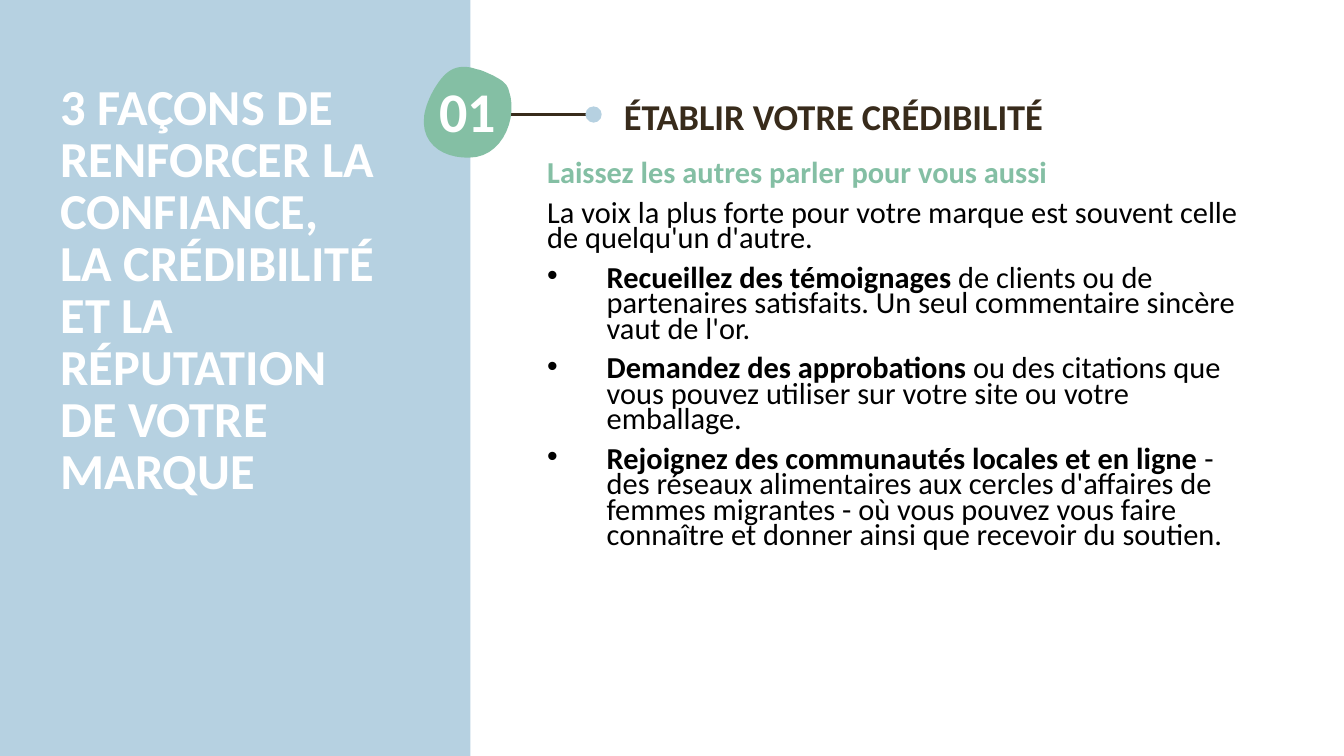
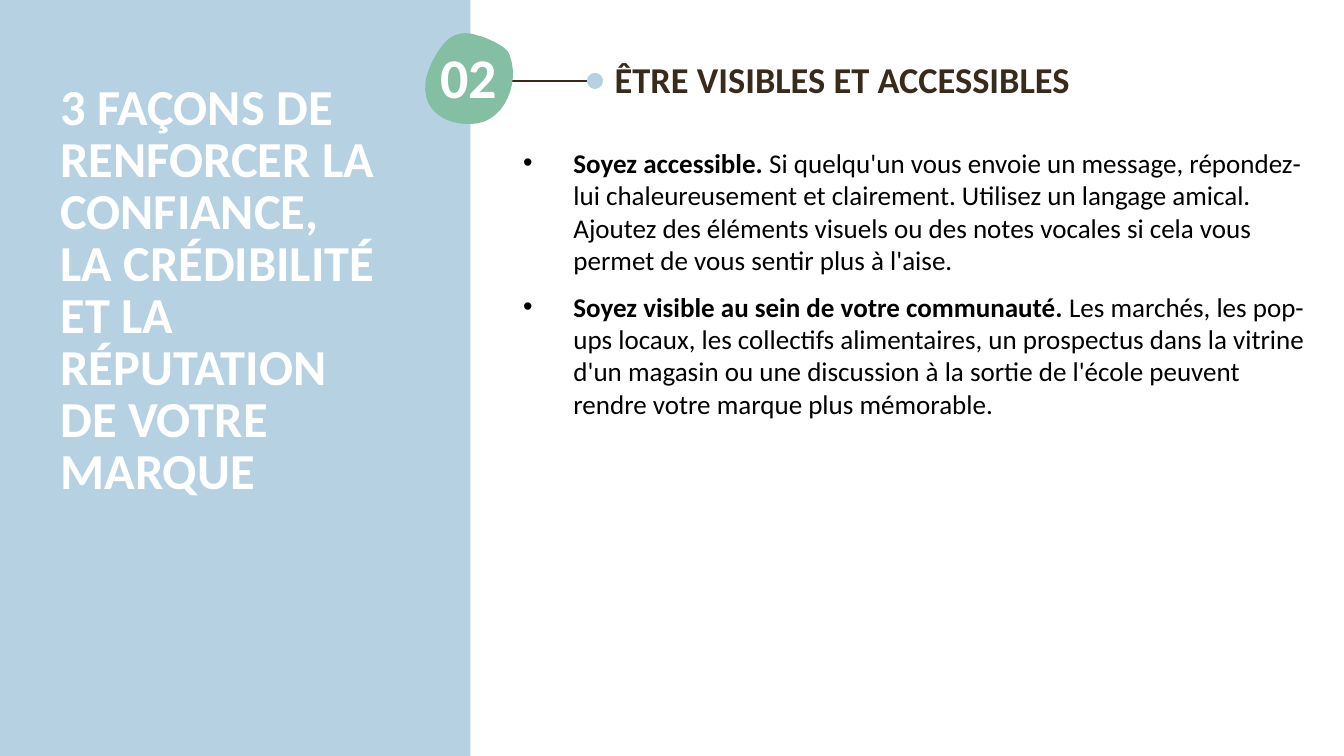
from lxml.etree import SubElement
from pptx import Presentation
from pptx.dml.color import RGBColor
from pptx.enum.shapes import MSO_CONNECTOR, MSO_SHAPE
from pptx.enum.text import MSO_ANCHOR, MSO_AUTO_SIZE, PP_ALIGN
from pptx.oxml.ns import qn
from pptx.util import Pt

TITLE = ("3 FAÇONS DE RENFORCER LA CONFIANCE,\vLA CRÉDIBILITÉ ET LA RÉPUTATION "
         "DE VOTRE MARQUE")
BADGE_START = (37.4, 1.4)
BADGE_CURVES = [
    ((29.5, -1.4), (20.9, -1.4), (13.7, 6.5)),
    ((7.2, 13.7), (1.4, 25.2), (0, 34.6)),
    ((-2.9, 56.9), (17.3, 67), (37.4, 64.1)),
    ((56.9, 60.5), (67, 35.3), (60.5, 16.6)),
    ((59, 10.8), (54, 8.6), (49, 5.8)),
    ((45.4, 4.3), (41.8, 2.2), BADGE_START),
]


def color(value):
    """Turn a hex string into a colour."""
    return RGBColor.from_string(value)


def curve_points(start, curves, steps=12):
    """Return points along a chain of cubic curves."""
    points = []
    for first, second, end in curves:
        for step in range(1, steps + 1):
            t = step / steps
            u = 1 - t
            points.append(tuple(
                u**3 * a + 3 * u * u * t * b + 3 * u * t * t * c + t**3 * d
                for a, b, c, d in zip(start, first, second, end)))
        start = end
    return points


class Deck:
    """Hold the style and the current slide."""

    FONT = "Calibri"
    BLUE, GREEN, BROWN = "B6D1E1", "84BFA4", "382B1B"
    WHITE, BLACK = "FFFFFF", "000000"
    WIDTH, HEIGHT = 960, 540

    def __init__(self):
        """Start a wide presentation."""
        self.presentation = Presentation()
        self.presentation.slide_width = Pt(self.WIDTH)
        self.presentation.slide_height = Pt(self.HEIGHT)
        self.slide = None

    def add_slide(self):
        """Add a slide with the side band and its title."""
        self.slide = self.presentation.slides.add_slide(
            self.presentation.slide_layouts[5])
        band = self.shape(MSO_SHAPE.RECTANGLE, 0, 0, 336, self.HEIGHT)
        title = self.slide.shapes.title
        title.element.addprevious(band.element)
        title.left, title.top, title.width, title.height = map(Pt, (36, 56, 240.5, 157))
        frame = title.text_frame
        frame.text = TITLE
        frame.vertical_anchor = MSO_ANCHOR.TOP
        frame.auto_size = MSO_AUTO_SIZE.NONE
        paragraph = frame.paragraphs[0]
        paragraph.alignment = PP_ALIGN.LEFT
        paragraph.line_spacing = Pt(37.2)
        self.style(paragraph, 36, self.WHITE, True)

    def style(self, paragraph, size, text_color, bold=None):
        """Set the font of a paragraph."""
        font = paragraph.font
        font.name, font.size, font.bold = self.FONT, Pt(size), bold
        font.color.rgb = color(text_color)

    def paint(self, shape, fill):
        """Give a shape a plain fill without line or shadow."""
        shape.shadow.inherit = False
        shape.fill.solid()
        shape.fill.fore_color.rgb = color(fill)
        shape.line.fill.background()
        return shape

    def shape(self, kind, left, top, width, height):
        """Add a blue preset shape."""
        shape = self.slide.shapes.add_shape(kind, *map(Pt, (left, top, width, height)))
        return self.paint(shape, self.BLUE)

    def text_frame(self, left, top, width, height):
        """Add a wrapping text box and return its frame."""
        box = self.slide.shapes.add_textbox(*map(Pt, (left, top, width, height)))
        box.text_frame.word_wrap = True
        return box.text_frame

    def label(self, text, area, size, text_color, centered=False, spacing=None):
        """Add a bold one-line text."""
        paragraph = self.text_frame(*area).paragraphs[0]
        paragraph.text = text
        paragraph.alignment = PP_ALIGN.CENTER if centered else PP_ALIGN.LEFT
        paragraph.line_spacing = spacing
        self.style(paragraph, size, text_color, True)

    def marker(self, number, left, top):
        """Add a numbered badge with its line and dot."""
        axis = top + 33.8
        line = self.slide.shapes.add_connector(
            MSO_CONNECTOR.STRAIGHT, Pt(left + 118.8), Pt(axis), Pt(left + 23), Pt(axis))
        line.line.color.rgb = color(self.BROWN)
        line.line.width = Pt(1.5)
        SubElement(line.element.spPr, qn("a:effectLst"))
        self.shape(MSO_SHAPE.OVAL, left + 115.2, axis - 5.8, 11.6, 11.6)
        start, *points = [(Pt(left + x), Pt(top + y)) for x, y in
                          [BADGE_START] + curve_points(BADGE_START, BADGE_CURVES)]
        builder = self.slide.shapes.build_freeform(*start)
        builder.add_line_segments(points)
        self.paint(builder.convert_to_shape(), self.GREEN)
        self.label(number, (left - 4.3, top + 8.6, 70.6, 42.5), 40, self.WHITE, True, 0.9)

    def heading(self, text, left, top, height):
        """Add the heading beside a marker."""
        self.label(text, (left, top, 480, height), 26, self.BROWN)

    def body(self, area, size, bullets, indent, spacing=None, lead="", intro=""):
        """Add optional opening lines and bullets with bold starts."""
        frame = self.text_frame(*area)
        rows = [(lead, "", self.GREEN, False), (intro, "", self.BLACK, False)] if lead else []
        rows += [(start, rest, self.BLACK, True) for start, rest in bullets]
        for index, (start, rest, text_color, bulleted) in enumerate(rows):
            paragraph = frame.add_paragraph() if index else frame.paragraphs[0]
            paragraph.line_spacing = spacing
            if index:
                paragraph.space_before = Pt(10)
            if bulleted:
                self.bullet(paragraph, indent)
                paragraph.add_run().text = start
                paragraph.add_run().text = rest
                paragraph.runs[0].font.bold = True
            else:
                paragraph.text = start
            self.style(paragraph, size, text_color, start == lead or None)

    def bullet(self, paragraph, indent):
        """Add a hanging bullet to a paragraph."""
        properties = paragraph._p.get_or_add_pPr()
        properties.set("marL", str(Pt(indent)))
        properties.set("indent", str(-Pt(indent)))
        SubElement(properties, qn("a:buFont"), typeface="Arial")
        SubElement(properties, qn("a:buChar"), char="•")


def main():
    """Build and save the presentation."""
    deck = Deck()

    deck.add_slide()
    deck.marker("01", 303, 48)
    deck.heading("ÉTABLIR VOTRE CRÉDIBILITÉ", 438.5, 64, 70.5)
    deck.body((383.8, 113, 524, 292), 21.7, [
        ("Recueillez des témoignages ",
         "de clients ou de partenaires satisfaits. Un seul commentaire sincère "
         "vaut de l'or."),
        ("Demandez des approbations ",
         "ou des citations que vous pouvez utiliser sur votre site ou votre emballage."),
        ("Rejoignez des communautés locales et en ligne ",
         "- des réseaux alimentaires aux cercles d'affaires de femmes migrantes - où "
         "vous pouvez vous faire connaître et donner ainsi que recevoir du soutien."),
    ], 42.5, 0.7, "Laissez les autres parler pour vous aussi",
        "La voix la plus forte pour votre marque est souvent celle de quelqu'un d'autre.")

    deck.add_slide()
    deck.marker("02", 304, 24)
    deck.heading("ÊTRE VISIBLES ET ACCESSIBLES", 432, 37, 39)
    deck.body((366.5, 101, 577.5, 239), 19.3, [
        ("Soyez accessible. ",
         "Si quelqu'un vous envoie un message, répondez-lui chaleureusement et "
         "clairement. Utilisez un langage amical. Ajoutez des éléments visuels ou des "
         "notes vocales si cela vous permet de vous sentir plus à l'aise."),
        ("Soyez visible au sein de votre communauté. ",
         "Les marchés, les pop-ups locaux, les collectifs alimentaires, un prospectus "
         "dans la vitrine d'un magasin ou une discussion à la sortie de l'école peuvent "
         "rendre votre marque plus mémorable."),
    ], 36)

    deck.presentation.save("out.pptx")


if __name__ == "__main__":
    main()
